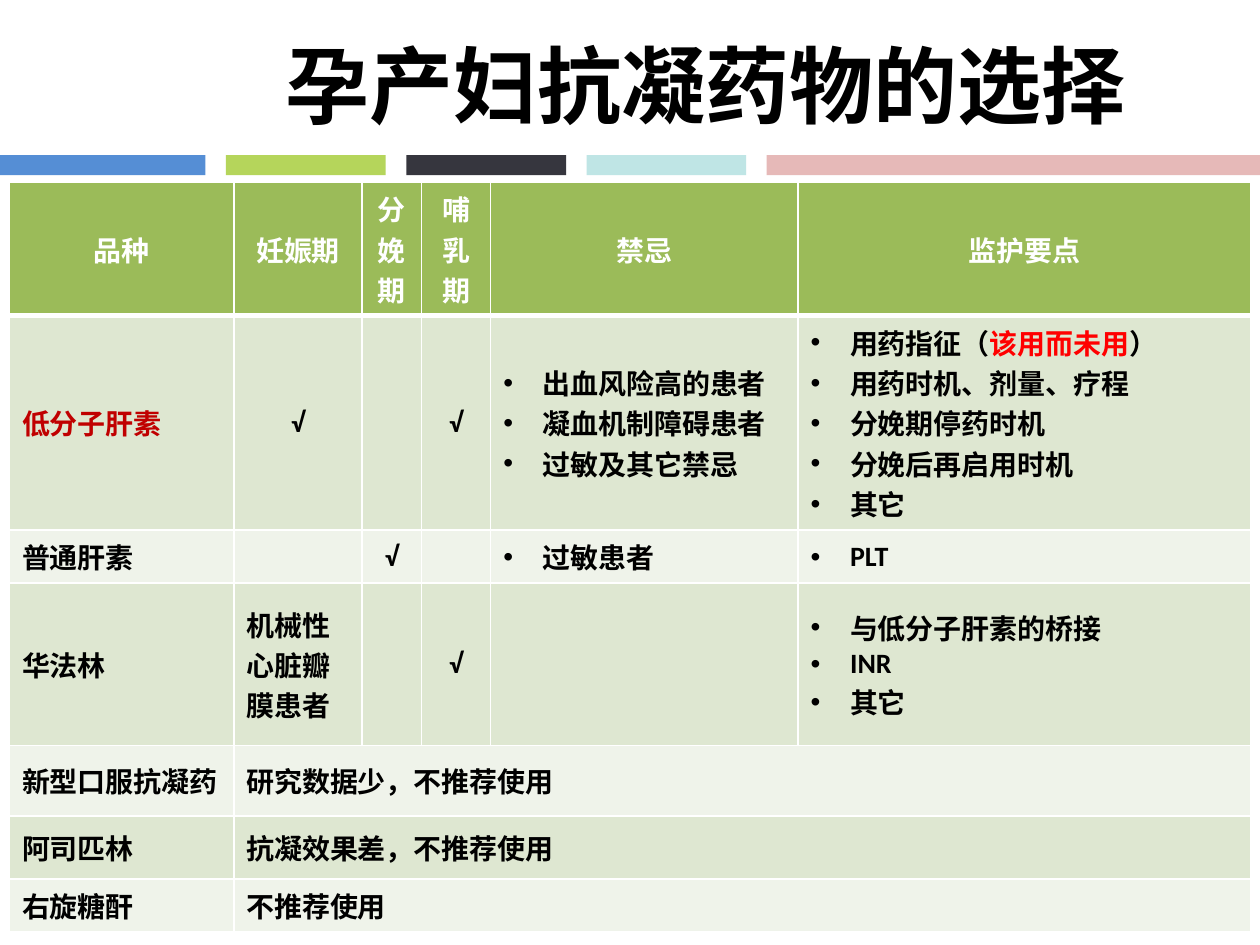
from lxml import etree
from pptx import Presentation
from pptx.dml.color import RGBColor
from pptx.enum.shapes import MSO_SHAPE
from pptx.enum.text import MSO_ANCHOR, PP_ALIGN
from pptx.oxml.ns import qn
from pptx.util import Pt

RECTANGLE = MSO_SHAPE.RECTANGLE
MIDDLE = MSO_ANCHOR.MIDDLE
LEFT, CENTER = PP_ALIGN.LEFT, PP_ALIGN.CENTER
TITLE_ONLY = 5

COLORS = {
    "black": "000000", "white": "FFFFFF", "red": "FF0000", "dark red": "C00000",
    "header": "9BBB59", "band": "DEE7D1", "light band": "EFF3EA",
    "blue": "558ED5", "lime": "B5D55B", "charcoal": "36363E",
    "aqua": "BFE5E5", "pink": "E6B9B8",
}

# Colour strip: colour and width of each bar
BARS = [("blue", 117.4), ("lime", 91.4), ("charcoal", 91.4),
        ("aqua", 91.1), ("pink", 282)]
BAR_GAP = 11.7

# Table: each cell is a list of paragraphs; a paragraph is a text or a list
# of (text, colour) runs. A short row has its last cell spread to the right.
COLUMN_WIDTHS = [128.2, 73.4, 33.8, 39.6, 175.7, 258.5]
ROW_HEIGHTS = [71.3, 122.4, 28.8, 92.9, 40.3, 36, 28.8]
BULLET_COLUMNS = (4, 5)
CHECK = ["√"]
ROWS = [
    [["品种"], ["妊娠期"], ["分娩期"], ["哺乳期"], ["禁忌"], ["监护要点"]],
    [[[("低分子肝素", "dark red")]], CHECK, [], CHECK,
     ["出血风险高的患者", "凝血机制障碍患者", "过敏及其它禁忌"],
     [[("用药指征（", "black"), ("该用而未用", "red"), ("）", "black")],
      "用药时机、剂量、疗程", "分娩期停药时机", "分娩后再启用时机", "其它"]],
    [["普通肝素"], [], CHECK, [], ["过敏患者"], ["PLT"]],
    [["华法林"], ["机械性心脏瓣膜患者"], [], CHECK, [],
     ["与低分子肝素的桥接", "INR", "其它"]],
    [["新型口服抗凝药"], ["研究数据少，不推荐使用"]],
    [["阿司匹林"], ["抗凝效果差，不推荐使用"]],
    [["右旋糖酐"], ["不推荐使用"]],
]


def rgb(name):
    return RGBColor.from_string(COLORS[name])


class SlideBuilder:
    cjk_font = "Noto Sans CJK SC"
    table_font = "Calibri"
    title_size = 48
    table_size = 16
    bullet_indent = 22.5

    def __init__(self, slide):
        self.slide = slide

    def run(self, para, text, size, font, color):
        span = para.add_run()
        span.text = text
        span.font.size = Pt(size)
        span.font.bold = True
        span.font.name = font
        span.font.color.rgb = rgb(color)
        east_asian = etree.SubElement(span.font._element, qn("a:ea"))
        east_asian.set("typeface", self.cjk_font)

    def title(self, text, left, top, width, height):
        box = self.slide.shapes.title
        box.left, box.top = Pt(left), Pt(top)
        box.width, box.height = Pt(width), Pt(height)
        box.text_frame.word_wrap = True
        box.text_frame.vertical_anchor = MIDDLE
        para = box.text_frame.paragraphs[0]
        para.alignment = LEFT
        self.run(para, text, self.title_size, self.cjk_font, "black")

    def bar(self, color, left, top, width, height):
        shape = self.slide.shapes.add_shape(
            RECTANGLE, Pt(left), Pt(top), Pt(width), Pt(height))
        shape.shadow.inherit = False
        shape.fill.solid()
        shape.fill.fore_color.rgb = rgb(color)
        shape.line.fill.background()

    def borders(self, cell, bottom):
        properties = cell._tc.get_or_add_tcPr()
        for side, width in (("L", 1), ("R", 1), ("T", 1), ("B", bottom)):
            line = etree.SubElement(properties, qn(f"a:ln{side}"), w=str(Pt(width)))
            fill = etree.SubElement(line, qn("a:solidFill"))
            etree.SubElement(fill, qn("a:srgbClr"), val=COLORS["white"])

    def bullet(self, para):
        properties = para._p.get_or_add_pPr()
        properties.set("marL", str(Pt(self.bullet_indent)))
        properties.set("indent", str(-Pt(self.bullet_indent)))
        etree.SubElement(properties, qn("a:buFont"), typeface="Arial")
        etree.SubElement(properties, qn("a:buChar"), char="•")

    def cell_text(self, cell, paragraphs, color, centered, bulleted):
        frame = cell.text_frame
        for index, content in enumerate(paragraphs):
            para = frame.add_paragraph() if index else frame.paragraphs[0]
            para.alignment = CENTER if centered else LEFT
            if bulleted:
                self.bullet(para)
            runs = [(content, color)] if isinstance(content, str) else content
            for text, run_color in runs:
                self.run(para, text, self.table_size, self.table_font, run_color)

    def table(self, rows, left, top, widths, heights):
        table = self.slide.shapes.add_table(
            len(rows), len(widths), Pt(left), Pt(top),
            Pt(sum(widths)), Pt(sum(heights))).table
        for column, width in zip(table.columns, widths):
            column.width = Pt(width)
        for r, (row, height) in enumerate(zip(rows, heights)):
            table.rows[r].height = Pt(height)
            header = r == 0
            fill = "header" if header else "band" if r % 2 else "light band"
            for c in range(len(widths)):
                cell = table.cell(r, c)
                cell.vertical_anchor = MIDDLE
                self.borders(cell, 3 if header else 1)
                cell.fill.solid()
                cell.fill.fore_color.rgb = rgb(fill)
            for c, paragraphs in enumerate(row):
                self.cell_text(table.cell(r, c), paragraphs,
                               "white" if header else "black",
                               header or paragraphs == CHECK,
                               not header and c in BULLET_COLUMNS)
            if len(row) < len(widths):
                table.cell(r, len(row) - 1).merge(table.cell(r, len(widths) - 1))


def main():
    deck = Presentation()
    deck.slide_width, deck.slide_height = Pt(720), Pt(540)
    page = SlideBuilder(deck.slides.add_slide(deck.slide_layouts[TITLE_ONLY]))

    # Title
    page.title("孕产妇抗凝药物的选择", 156.2, 15.1, 521.3, 65.5)

    # Colour strip
    left = 0
    for color, width in BARS:
        page.bar(color, left, 88.6, width, 11.5)
        left += width + BAR_GAP

    # Drug comparison table
    page.table(ROWS, 5.4, 104, COLUMN_WIDTHS, ROW_HEIGHTS)

    deck.save("out.pptx")


if __name__ == "__main__":
    main()
